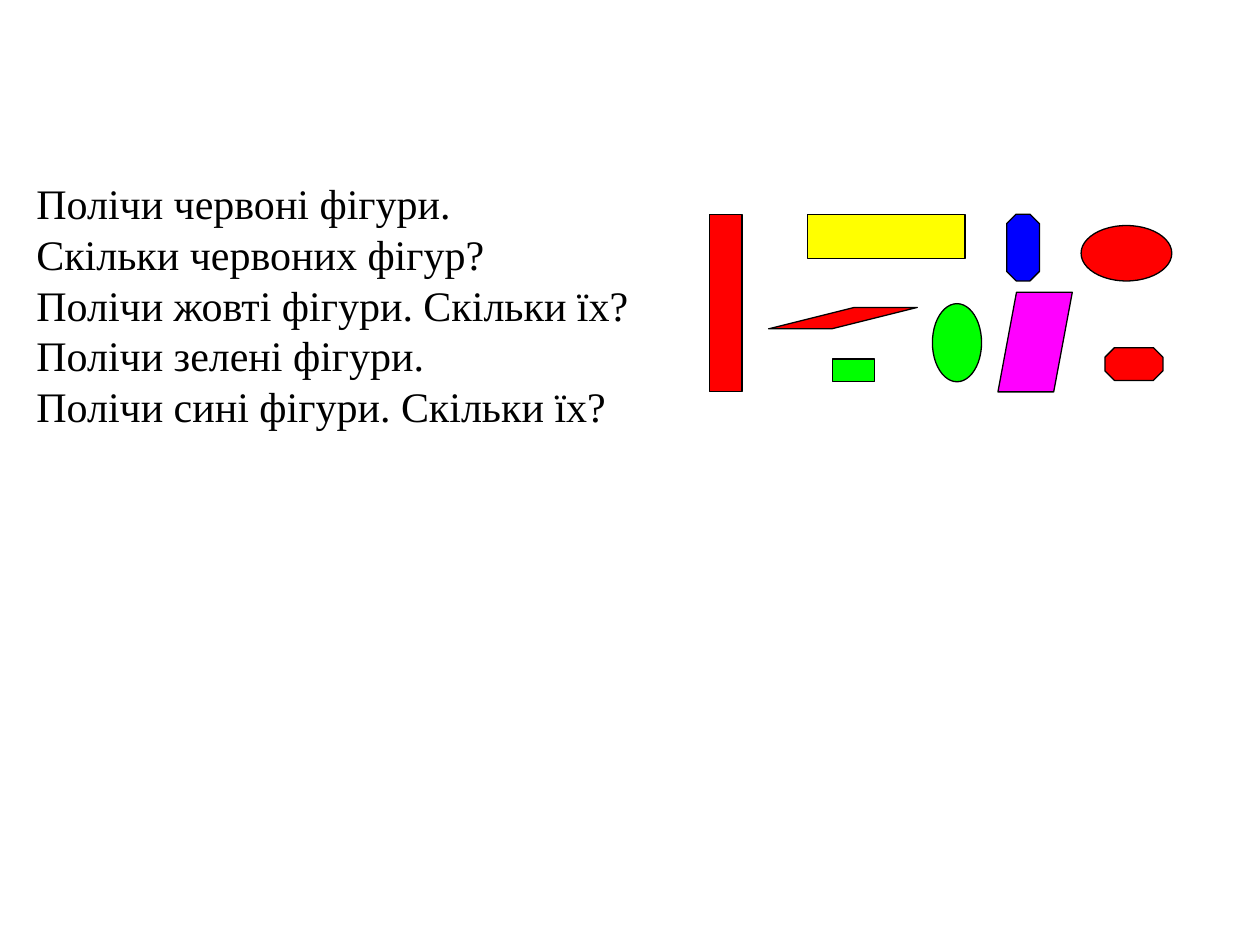
from pptx import Presentation
from pptx import util as u
from pptx.dml.color import RGBColor
from pptx.enum import shapes, text

KIND = shapes.MSO_SHAPE
RED, GREEN, BLUE = "FF0000", "00FF00", "0000FF"
YELLOW, PINK, BLACK = "FFFF00", "FF00FF", "000000"

TASKS = [
    "Полічи червоні фігури. ",
    "Скільки червоних фігур? ",
    "Полічи жовті фігури. Скільки їх? ",
    "Полічи зелені фігури. ",
    "Полічи сині фігури. Скільки їх?",
]

FIGURES = [
    (KIND.RECTANGLE, RED, (5.63, 1.7, 0.26, 1.41), None),
    (KIND.RECTANGLE, GREEN, (6.61, 2.85, 0.33, 0.18), None),
    (KIND.RECTANGLE, YELLOW, (6.41, 1.7, 1.25, 0.35), None),
    (KIND.OVAL, GREEN, (7.4, 2.41, 0.39, 0.62), None),
    (KIND.OVAL, RED, (8.58, 1.79, 0.72, 0.44), None),
    (KIND.PARALLELOGRAM, RED, (6.1, 2.44, 1.18, 0.17), 4),
    (KIND.PARALLELOGRAM, PINK, (7.92, 2.32, 0.59, 0.79), 0.25),
    (KIND.OCTAGON, RED, (8.77, 2.76, 0.46, 0.26), 0.29),
    (KIND.OCTAGON, BLUE, (7.99, 1.7, 0.26, 0.53), 0.29),
]


def paint(part, color):
    part.solid()
    part.fore_color.rgb = RGBColor.from_string(color)


def add_tasks(slide, box, lines):
    frame = slide.shapes.add_textbox(*map(u.Inches, box)).text_frame
    frame.word_wrap = True
    frame.vertical_anchor = text.MSO_ANCHOR.MIDDLE
    frame.margin_left = u.Inches(0.1)
    frame.margin_right = frame.margin_top = frame.margin_bottom = u.Inches(0.05)
    para = frame.paragraphs[0]
    para.alignment = text.PP_ALIGN.LEFT
    para.line_spacing = u.Pt(28.9)
    for i, line in enumerate(lines):
        if i:
            para.add_line_break()
        run = para.add_run()
        run.text = line
        run.font.name = "Times New Roman"
        run.font.size = u.Pt(24)
        paint(run.font.fill, BLACK)


def add_figure(group, kind, color, box, adjust):
    shape = group.shapes.add_shape(kind, *map(u.Inches, box))
    shape.shadow.inherit = False
    paint(shape.fill, color)
    paint(shape.line.fill, BLACK)
    shape.line.width = u.Pt(0.75)
    if adjust is not None:
        shape.adjustments[0] = adjust


def main():
    deck = Presentation()
    deck.slide_width, deck.slide_height = u.Inches(10), u.Inches(7.5)
    slide = deck.slides.add_slide(deck.slide_layouts[6])
    add_tasks(slide, (0.19, 1.55, 5.67, 1.73), TASKS)
    group = slide.shapes.add_group_shape()
    for figure in FIGURES:
        add_figure(group, *figure)
    deck.save("out.pptx")


if __name__ == "__main__":
    main()
